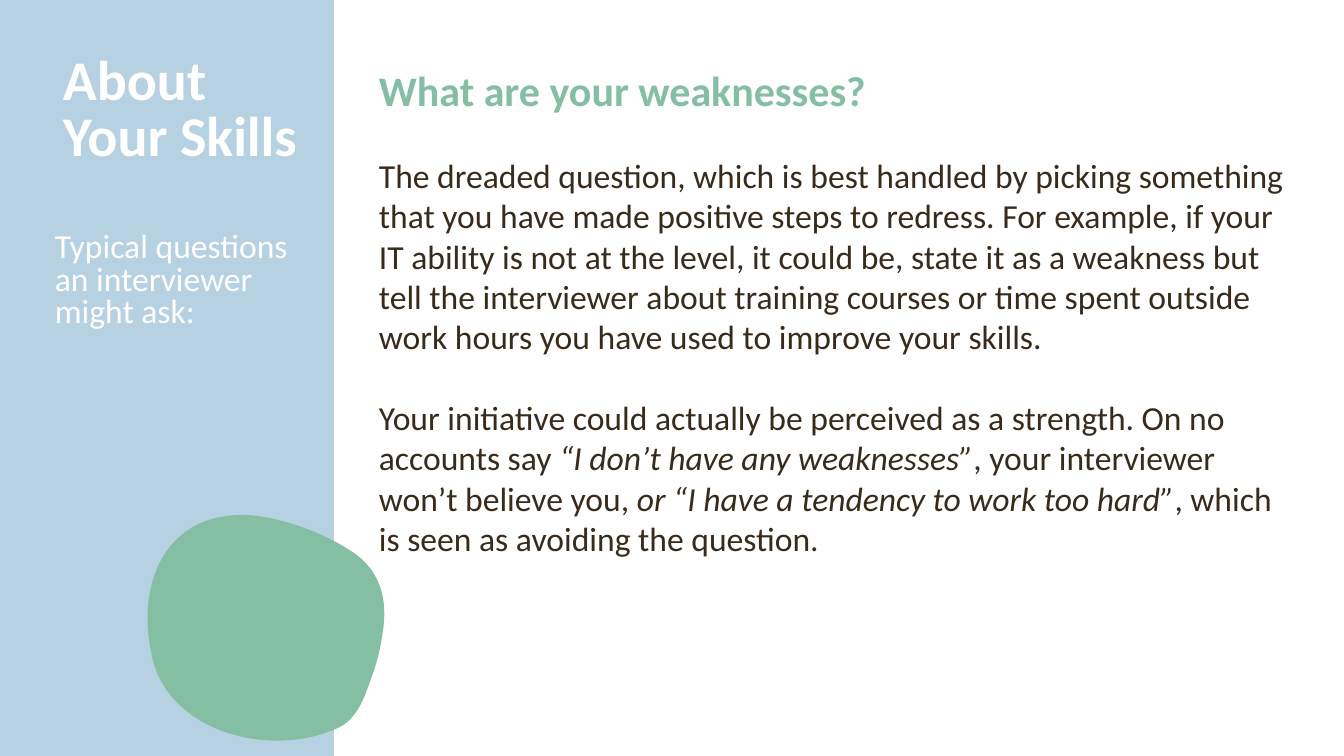
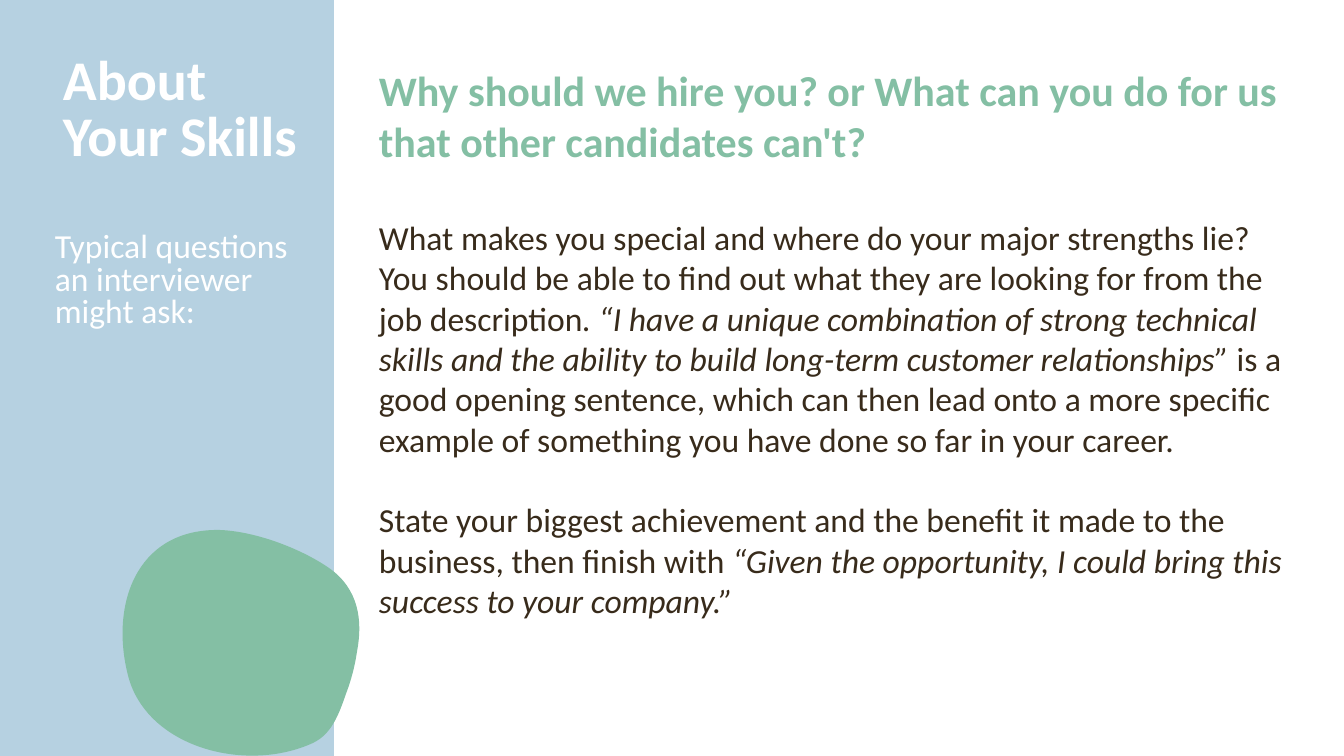
from pptx import Presentation
from pptx.dml.color import RGBColor
from pptx.enum.shapes import MSO_SHAPE as Shape
from pptx.enum.text import MSO_ANCHOR as Anchor, MSO_AUTO_SIZE as AutoSize
from pptx.oxml import parse_xml
from pptx.oxml.ns import nsdecls, qn
from pptx.util import Pt

PX = 914400 / 100.8
FONT = "Calibri"
COLORS = {"sidebar": "B6D1E1", "accent": "84BFA4", "body": "382B1B", "white": "FFFFFF"}
PAGE = (1344, 756)
SIDEBAR = (0, 0, 334, 756)
CONTENT = (369, 60, 930, 654)
BLOB_START = (234, 122)
BLOB_CURVES = [
    ((240, 91), (236, 59), (206, 38)),
    ((177, 18), (131, 1), (96, 0)),
    ((12, -1), (-14, 77), (6, 149)),
    ((27, 219), (125, 243), (190, 213)),
    ((209, 204), (216, 184), (223, 164)),
    ((228, 151), (232, 136), BLOB_START),
]

QUESTIONS = [
    {
        "heading": "What are your weaknesses?",
        "body_offset": 90,
        "blob": (148, 515),
        "answer": [
            [("The dreaded question, which is best handled by picking something that you have made "
              "positive steps to redress. For example, if your IT ability is not at the level, it "
              "could be, state it as a weakness but tell the interviewer about training courses or "
              "time spent outside work hours you have used to improve your skills.", False)],
            [("Your initiative could actually be perceived as a strength. On no accounts say ", False),
             ("“I don’t have any weaknesses”", True),
             (", your interviewer won’t believe you, ", False),
             ("or “I have a tendency to work too hard”", True),
             (", which is seen as avoiding the question.", False)],
        ],
    },
    {
        "heading": "Why should we hire you? or What can you do for us that other candidates can't?",
        "body_offset": 152,
        "blob": (123, 530),
        "answer": [
            [("What makes you special and where do your major strengths lie? You should be able to "
              "find out what they are looking for from the job description", False),
             (". “I have a unique combination of strong technical skills and the ability to build "
              "long-term customer relationships” ", True),
             ("is a good opening sentence, which can then lead onto a more specific example of "
              "something you have done so far in your career.", False)],
            [("State your biggest achievement and the benefit it made to the business, then finish "
              "with ", False),
             ("“Given the opportunity, I could bring this success to your company.”", True)],
        ],
    },
]


def emu(length):
    """Turn px into EMU."""
    return round(length * PX)


def paint(shape, color):
    """Give a shape a flat fill with no line or shadow."""
    shape.shadow.inherit = False
    shape.fill.solid()
    shape.fill.fore_color.rgb = RGBColor.from_string(COLORS[color])
    shape.line.fill.background()


def add_text(slide, box, paragraphs, size=24, color="body", bold=False, spacing=None, gap=0):
    """Write paragraphs, each a string or a list of (text, italic) runs, in a box."""
    frame = slide.shapes.add_textbox(*map(emu, box)).text_frame
    frame.word_wrap = True
    frame.auto_size = AutoSize.NONE
    frame.vertical_anchor = Anchor.TOP
    for index, runs in enumerate(paragraphs):
        paragraph = frame.add_paragraph() if index else frame.paragraphs[0]
        if index:
            paragraph.space_before = Pt(gap)
        if spacing:
            paragraph.line_spacing = Pt(spacing)
        for text, italic in [(runs, False)] if isinstance(runs, str) else runs:
            run = paragraph.add_run()
            run.text = text
            font = run.font
            font.name, font.size, font.bold, font.italic = FONT, Pt(size), bold, italic
            font.color.rgb = RGBColor.from_string(COLORS[color])


def bend_outline(shape):
    """Turn each three straight segments of a freeform into one cubic curve."""
    segments = list(shape.element.iter(qn("a:lnTo")))
    for start in range(0, len(segments), 3):
        curve = parse_xml(f"<a:cubicBezTo {nsdecls('a')}/>")
        segments[start].addprevious(curve)
        for segment in segments[start:start + 3]:
            curve.append(segment[0])
            segment.getparent().remove(segment)


def add_blob(slide, origin):
    """Draw the rounded accent blob with its corner at origin."""
    left, top = origin
    start, *points = [(emu(left + x), emu(top + y))
                      for x, y in [BLOB_START, *sum(BLOB_CURVES, ())]]
    builder = slide.shapes.build_freeform(*start, scale=1.0)
    builder.add_line_segments(points, close=True)
    blob = builder.convert_to_shape()
    bend_outline(blob)
    paint(blob, "accent")


def add_sidebar(slide, box):
    """Draw the band with the section title and its introduction."""
    left, top, _, _ = box
    paint(slide.shapes.add_shape(Shape.RECTANGLE, *map(emu, box)), "sidebar")
    add_text(slide, (left + 53, top + 50, 261, 252), ["About Your Skills"],
             size=40, color="white", bold=True, spacing=40.2)
    add_text(slide, (left + 45, top + 228, 265, 229),
             ["Typical questions an interviewer might ask:"], color="white", spacing=23.2)


def add_content(slide, box, question):
    """Write the question heading and its answer."""
    left, top, width, height = box
    offset = question["body_offset"]
    add_text(slide, (left, top, width, 57), [question["heading"]],
             size=30, color="accent", bold=True)
    add_text(slide, (left, top + offset, width, height - offset), question["answer"], gap=28.8)


def add_question_slide(presentation, question):
    """Build one interview question slide."""
    slide = presentation.slides.add_slide(presentation.slide_layouts[6])
    add_sidebar(slide, SIDEBAR)
    add_content(slide, CONTENT, question)
    add_blob(slide, question["blob"])


def main():
    """Build and save the presentation."""
    presentation = Presentation()
    presentation.slide_width, presentation.slide_height = map(emu, PAGE)
    for question in QUESTIONS:
        add_question_slide(presentation, question)
    presentation.save("out.pptx")


if __name__ == "__main__":
    main()
